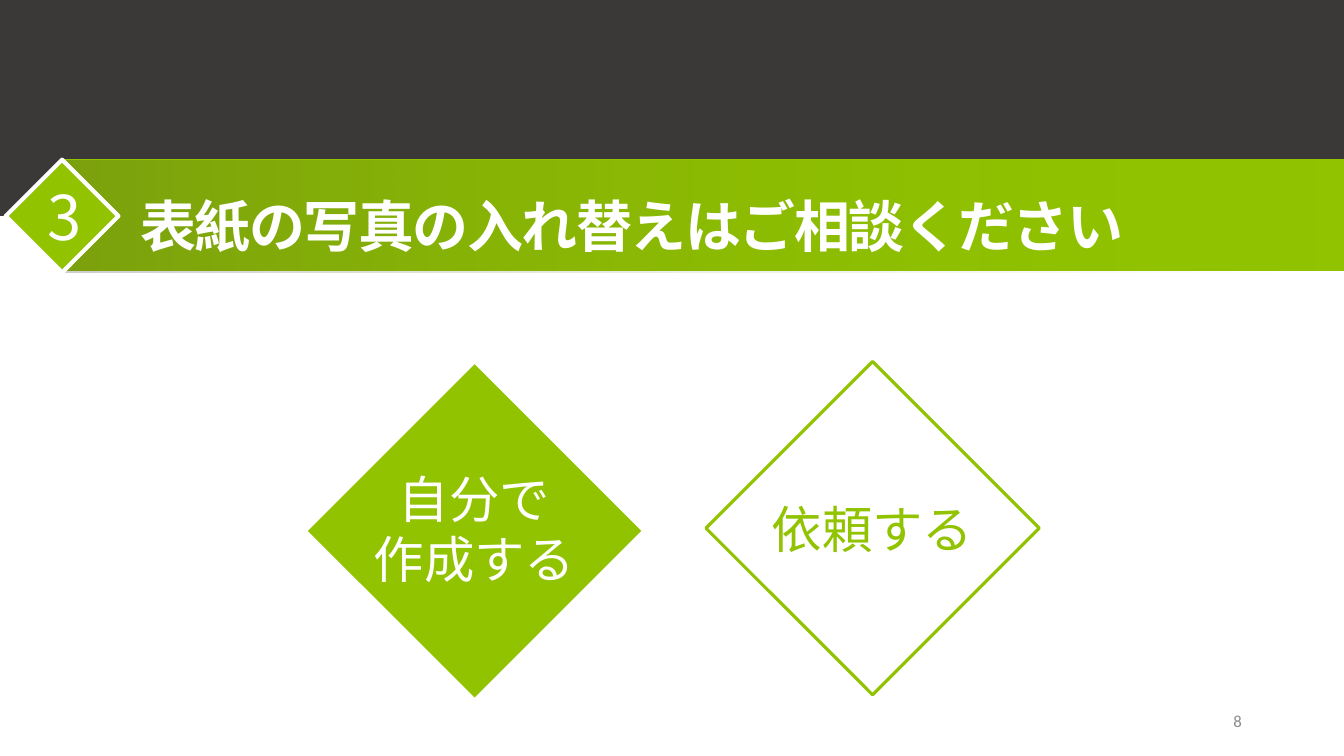
from dataclasses import dataclass
from typing import Optional

import pptx
import pptx.dml.color
import pptx.enum.shapes
import pptx.enum.text
import pptx.oxml
import pptx.oxml.ns
import pptx.util
from lxml import etree

Cm = pptx.util.Cm
Pt = pptx.util.Pt
RGBColor = pptx.dml.color.RGBColor
PP_ALIGN = pptx.enum.text.PP_ALIGN
MSO_ANCHOR = pptx.enum.text.MSO_ANCHOR
MSO_AUTO_SIZE = pptx.enum.text.MSO_AUTO_SIZE
qn = pptx.oxml.ns.qn

DARK = RGBColor(0x3B, 0x38, 0x38)
GREEN = RGBColor(0x91, 0xC3, 0x00)
WHITE = RGBColor(0xFF, 0xFF, 0xFF)
GRAY = RGBColor(0x8C, 0x8C, 0x8C)
JP_FONT = "Noto Sans CJK JP"


@dataclass
class Box:
    left: float
    top: float
    width: float
    height: float
    fill: RGBColor
    rotation: float = 0
    line: Optional[RGBColor] = None
    line_width: float = 0


@dataclass
class Label:
    left: float
    top: float
    width: float
    height: float
    text: str
    size: float
    color: RGBColor
    font: str = JP_FONT
    align: PP_ALIGN = PP_ALIGN.LEFT
    bold: bool = False
    wrap: bool = False
    grow: bool = True
    line_spacing: Optional[float] = None
    tracking: float = 0


HEADER = Box(0, 0, 33.87, 5.44, DARK)
BAND = Box(1.6, 4.01, 32.27, 2.82, GREEN)
SHADE = Box(1.6, 4.04, 32.27, 2.82, GREEN)
BADGE = Box(0.56, 4.44, 2.01, 2.01, GREEN, 315, WHITE, 3)

LABELS = [
    Label(0.94, 4.39, 1.3, 2.13, "3", 44, WHITE),
    Label(3.28, 4.62, 25.68, 2.03, "表紙の写真の入れ替えはご相談ください", 40, WHITE,
          bold=True, wrap=True, line_spacing=50, tracking=-1),
    Label(23.93, 17.65, 7.62, 1.02, "8", 12, GRAY, "Calibri", PP_ALIGN.RIGHT,
          wrap=True, grow=False),
]

CHOICES = [
    (Box(8.99, 10.41, 5.94, 5.94, GREEN, 45),
     Label(9.14, 11.66, 5.64, 3.33, "自分で\n作成する", 36, WHITE, align=PP_ALIGN.CENTER)),
    (Box(19.02, 10.34, 5.94, 5.94, WHITE, 45, GREEN, 2.25),
     Label(19.2, 12.42, 5.64, 1.8, "依頼する", 36, GREEN)),
]


def add_box(shapes, box: Box):
    sp = shapes.add_shape(pptx.enum.shapes.MSO_SHAPE.RECTANGLE, Cm(box.left), Cm(box.top),
                          Cm(box.width), Cm(box.height))
    sp.shadow.inherit = False
    sp.rotation = box.rotation
    sp.fill.solid()
    sp.fill.fore_color.rgb = box.fill
    if box.line is None:
        sp.line.fill.background()
    else:
        sp.line.color.rgb = box.line
        sp.line.width = Pt(box.line_width)
    return sp


def add_shade(shapes, box: Box) -> None:
    sp = add_box(shapes, box)
    sp.fill.gradient()
    sp.fill.gradient_angle = 0
    for stop, color in zip(sp.fill.gradient_stops, (DARK, GREEN)):
        stop.color.rgb = color
    for gs, alpha in zip(sp._element.iter(qn("a:gs")), (25000, 0)):
        etree.SubElement(gs[0], qn("a:alpha")).set("val", str(alpha))


def add_label(shapes, label: Label) -> None:
    sp = shapes.add_textbox(Cm(label.left), Cm(label.top), Cm(label.width), Cm(label.height))
    tf = sp.text_frame
    tf.word_wrap = label.wrap
    if label.grow:
        tf.auto_size = MSO_AUTO_SIZE.SHAPE_TO_FIT_TEXT
    else:
        tf.vertical_anchor = MSO_ANCHOR.MIDDLE
    tf.text = label.text
    for p in tf.paragraphs:
        p.alignment = label.align
        if label.line_spacing:
            p.line_spacing = Pt(label.line_spacing)
        for r in p.runs:
            r.font.size = Pt(label.size)
            r.font.bold = label.bold
            r.font.color.rgb = label.color
            r.font.name = label.font
            rPr = r.font._element
            etree.SubElement(rPr, qn("a:ea")).set("typeface", label.font)
            if label.tracking:
                rPr.set("spc", str(round(label.tracking * 100)))


def main() -> None:
    prs = pptx.Presentation()
    prs.slide_width, prs.slide_height = Cm(33.87), Cm(19.05)
    s = prs.slides.add_slide(prs.slide_layouts[6])
    add_box(s.shapes, HEADER)
    add_box(s.shapes, BAND)
    add_shade(s.shapes, SHADE)
    add_box(s.shapes, BADGE)
    for label in LABELS:
        add_label(s.shapes, label)
    for box, label in CHOICES:
        group = s.shapes.add_group_shape()
        add_box(group.shapes, box)
        add_label(group.shapes, label)
    prs.save("out.pptx")


if __name__ == "__main__":
    main()
